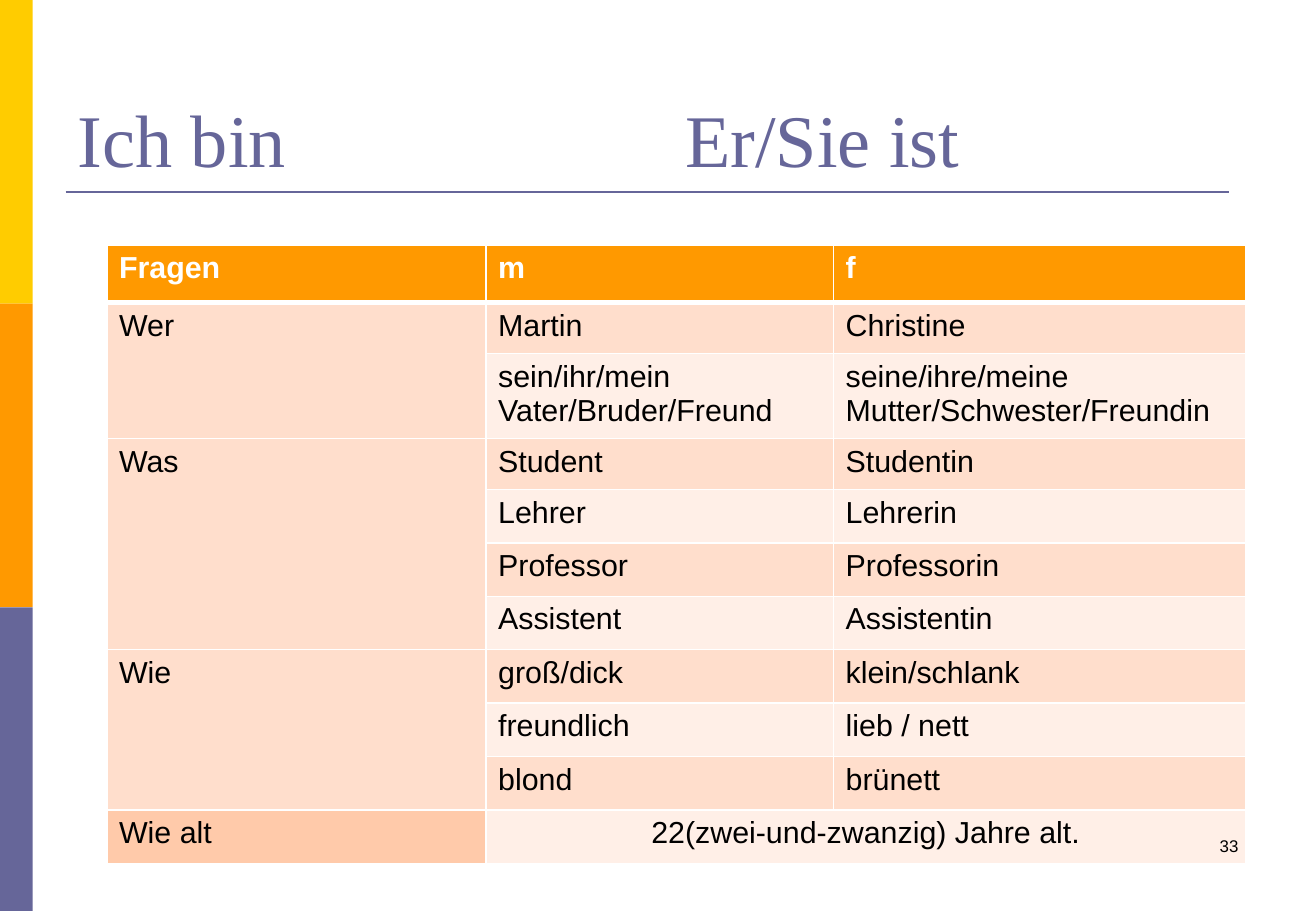
from lxml import etree
from pptx import Presentation, util as u
from pptx.dml.color import RGBColor
from pptx.enum import shapes, text
from pptx.oxml.ns import qn

PX = 9144  # EMU per px, 100 px to the inch

WHITE = RGBColor(0xFF, 0xFF, 0xFF)
BLACK = RGBColor(0, 0, 0)
YELLOW = RGBColor(0xFF, 0xCC, 0x00)
ORANGE = RGBColor(0xFF, 0x99, 0x00)
VIOLET = RGBColor(0x66, 0x66, 0x99)
PEACH = RGBColor(0xFF, 0xDE, 0xCC)
PALE = RGBColor(0xFF, 0xEF, 0xE7)
APRICOT = RGBColor(0xFF, 0xCA, 0xAA)

COLS = [312, 286, 339]
HEIGHTS = [47, 42, 66, 42] + [44] * 7
# An empty first entry continues the question above it
ROWS = [
    ("Fragen", "m", "f"),
    ("Wer", "Martin", "Christine"),
    ("", "sein/ihr/mein Vater/Bruder/Freund",
     "seine/ihre/meine Mutter/Schwester/Freundin"),
    ("Was", "Student", "Studentin"),
    ("", "Lehrer", "Lehrerin"),
    ("", "Professor", "Professorin"),
    ("", "Assistent", "Assistentin"),
    ("Wie", "groß/dick", "klein/schlank"),
    ("", "freundlich", "lieb / nett"),
    ("", "blond", "brünett"),
    ("Wie alt", "22(zwei-und-zwanzig) Jahre alt.", ""),
]
SPANS = [(1, 0, 2, 0), (3, 0, 6, 0), (7, 0, 9, 0), (10, 1, 10, 2)]


def px(*nums):
    return [u.Emu(n * PX) for n in nums]


def style(para, size, color, face="Arial", bold=False):
    for run in para.runs:
        font = run.font
        font.size, font.name, font.bold = u.Pt(size), face, bold
        font.color.rgb = color


def add_bar(slide, box, color):
    bar = slide.shapes.add_shape(shapes.MSO_SHAPE.RECTANGLE, *px(*box))
    bar.shadow.inherit = False
    bar.fill.solid()
    bar.fill.fore_color.rgb = color
    bar.line.fill.background()


def add_rule(slide, ends, color, width):
    rule = slide.shapes.add_connector(shapes.MSO_CONNECTOR.STRAIGHT, *px(*ends))
    rule.line.color.rgb = color
    rule.line.width = u.Pt(width)
    props = rule._element.find(qn("p:spPr"))
    etree.SubElement(props, qn("a:effectLst"))


def add_text(slide, box, words, anchor):
    frame = slide.shapes.add_textbox(*px(*box)).text_frame
    frame.word_wrap = True
    frame.vertical_anchor = anchor
    frame.text = words
    return frame.paragraphs[0]


def add_tab(para, stop):
    tabs = etree.SubElement(para._p.get_or_add_pPr(), qn("a:tabLst"))
    etree.SubElement(tabs, qn("a:tab"), pos=str(stop * PX), algn="l")


def set_edges(cell, top, bottom):
    props = cell._tc.get_or_add_tcPr()
    widths = {"a:lnL": 1, "a:lnR": 1, "a:lnT": top, "a:lnB": bottom}
    for place, (tag, width) in enumerate(widths.items()):
        edge = etree.Element(qn(tag), w=str(u.Pt(width)))
        fill = etree.SubElement(edge, qn("a:solidFill"))
        etree.SubElement(fill, qn("a:srgbClr"), val=str(WHITE))
        props.insert(place, edge)


def pick_fill(r, c):
    if r == 0:
        return ORANGE
    if c == 0:
        return APRICOT if r == len(ROWS) - 1 else PEACH
    return PEACH if r % 2 else PALE


def add_grid(slide, left, top):
    box = px(left, top, sum(COLS), sum(HEIGHTS))
    grid = slide.shapes.add_table(len(ROWS), len(COLS), *box).table
    grid.horz_banding = False
    for col, width in zip(grid.columns, px(*COLS)):
        col.width = width
    for row, height in zip(grid.rows, px(*HEIGHTS)):
        row.height = height
    for r, words in enumerate(ROWS):
        head = r == 0
        for c, word in enumerate(words):
            cell = grid.cell(r, c)
            cell.text_frame.text = word
            style(cell.text_frame.paragraphs[0], 18,
                  WHITE if head else BLACK, bold=head)
            cell.fill.solid()
            cell.fill.fore_color.rgb = pick_fill(r, c)
            set_edges(cell, 3 if r == 1 else 1, 3 if head else 1)
    for r, c, last, end in SPANS:
        grid.cell(r, c).merge(grid.cell(last, end))
    age = grid.cell(len(ROWS) - 1, 1).text_frame.paragraphs[0]
    age.alignment = text.PP_ALIGN.CENTER


def main():
    deck = Presentation()
    deck.slide_width, deck.slide_height = px(1083, 750)
    slide = deck.slides.add_slide(deck.slide_layouts[6])

    # Side stripe and title rule
    for i, color in enumerate((YELLOW, ORANGE, VIOLET)):
        add_bar(slide, (0, i * 250, 27, 250), color)
    add_rule(slide, (54, 158, 1011, 158), VIOLET, 1.5)

    # Title in two columns
    title = add_text(slide, (54, 30, 975, 125), "Ich bin\tEr/Sie ist",
                     text.MSO_ANCHOR.BOTTOM)
    add_tab(title, 500)
    style(title, 44, VIOLET, "Times New Roman")

    # Table of questions
    add_grid(slide, 88, 202)

    # Slide number
    number = add_text(slide, (776, 683, 253, 50), "33", text.MSO_ANCHOR.TOP)
    number.alignment = text.PP_ALIGN.RIGHT
    style(number, 10, BLACK)

    deck.save("out.pptx")


if __name__ == "__main__":
    main()
